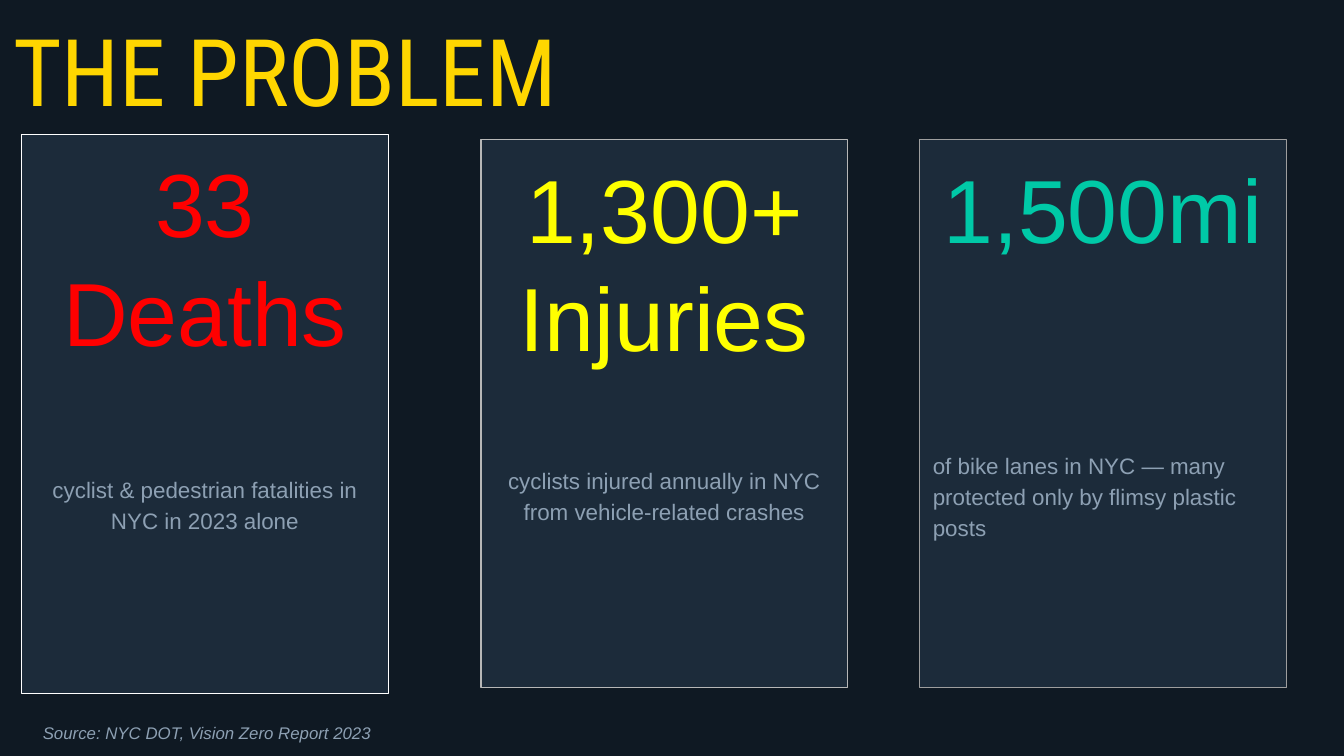
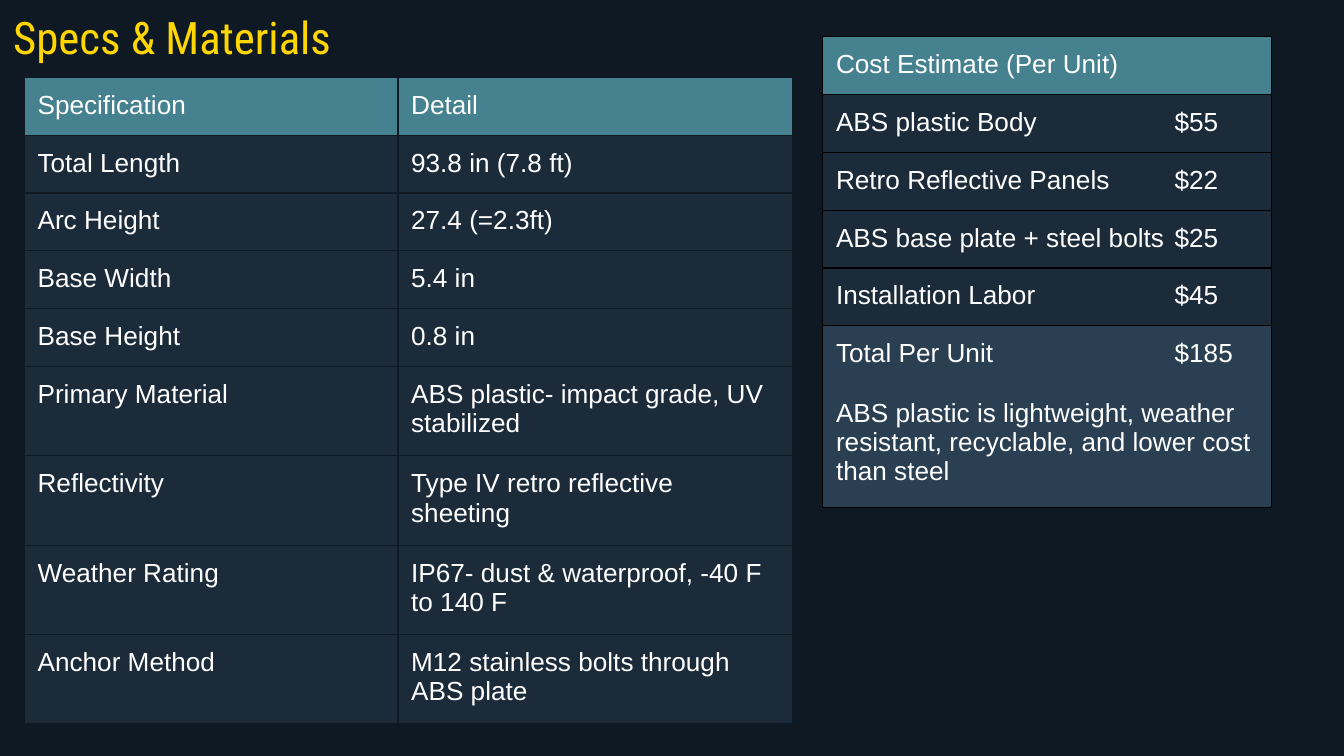
from lxml.etree import SubElement
from pptx import Presentation
from pptx.dml.color import RGBColor
from pptx.enum.shapes import MSO_SHAPE
from pptx.enum.text import MSO_ANCHOR, PP_ALIGN
from pptx.oxml.ns import qn
from pptx.util import Cm, Pt

BACKGROUND = "0F1923"
PANEL = "1C2B3A"
TOTAL_PANEL = "2A3F52"
HEADER = "45818E"
YELLOW = "FFD600"
MUTED = "8DA0B3"
WHITE = "FFFFFF"
BODY_FONT = "Arial"
TITLE_FONT = "Roboto Condensed"
INSET = Cm(0.25)
ROW_HEIGHT = Cm(1.06)
PRICE_STOP = Cm(6.4)

CARDS = [
    ((0.41, 2.54, 6.93, 10.57), WHITE, ["33", "Deaths"], "FF0000",
     "cyclist & pedestrian fatalities in NYC in 2023 alone", 58, PP_ALIGN.CENTER),
    ((9.09, 2.64, 6.93, 10.36), "B7B7B7", ["1,300+", "Injuries"], "FFFF00",
     "cyclists injured annually in NYC from vehicle-related crashes", 50, PP_ALIGN.CENTER),
    ((17.38, 2.64, 6.93, 10.36), "9E9E9E", ["1,500mi"], "00C9A7",
     "of bike lanes in NYC — many protected only by flimsy plastic posts", 100, PP_ALIGN.LEFT),
]

SPECIFICATIONS = [
    ("Specification", "Detail"),
    ("Total Length", "93.8 in (7.8 ft)"),
    ("Arc Height", "27.4 (=2.3ft)"),
    ("Base Width", "5.4 in"),
    ("Base Height", "0.8 in"),
    ("Primary Material", "ABS plastic- impact grade, UV stabilized"),
    ("Reflectivity", "Type IV retro reflective sheeting"),
    ("Weather Rating", "IP67- dust & waterproof, -40 F to 140 F"),
    ("Anchor Method", "M12 stainless bolts through ABS plate"),
]

COSTS = [
    ("Cost Estimate (Per Unit)",),
    ("ABS plastic Body\t$55",),
    ("Retro Reflective Panels\t$22",),
    ("ABS base plate + steel bolts\t$25",),
    ("Installation Labor\t$45",),
    ("Total Per Unit\t$185\nABS plastic is lightweight, weather resistant, "
     "recyclable, and lower cost than steel",),
]


def color(value):
    return RGBColor.from_string(value)


def style(paragraph, size, value, font=BODY_FONT, italic=None):
    for run in paragraph.runs:
        run.font.size = Pt(size)
        run.font.name = font
        run.font.italic = italic
        run.font.color.rgb = color(value)


def prepare(frame, anchor=MSO_ANCHOR.TOP):
    frame.word_wrap = True
    frame.vertical_anchor = anchor
    frame.margin_left = frame.margin_right = INSET
    frame.margin_top = frame.margin_bottom = INSET


def add_label(slide, box, text, size, value, font=BODY_FONT,
              anchor=MSO_ANCHOR.TOP, italic=None, spacing=None):
    frame = slide.shapes.add_textbox(*map(Cm, box)).text_frame
    prepare(frame, anchor)
    frame.text = text
    frame.paragraphs[0].line_spacing = spacing
    style(frame.paragraphs[0], size, value, font, italic)


def add_title(slide, box, text, size, anchor=MSO_ANCHOR.TOP):
    add_label(slide, box, text, size, YELLOW, TITLE_FONT, anchor)


def add_card(slide, box, outline, figures, accent, caption, gap, alignment):
    card = slide.shapes.add_shape(MSO_SHAPE.RECTANGLE, *map(Cm, box))
    card.shadow.inherit = False
    card.fill.solid()
    card.fill.fore_color.rgb = color(PANEL)
    card.line.color.rgb = color(outline)
    card.line.width = Pt(0.75)
    frame = card.text_frame
    prepare(frame)
    frame.text = "\n".join([*figures, caption])
    *headlines, description = frame.paragraphs
    for headline in headlines:
        headline.alignment = PP_ALIGN.CENTER
        headline.line_spacing = Pt(58)
        style(headline, 48, accent)
    description.alignment = alignment
    description.line_spacing = Pt(16.6)
    description.space_before = Pt(gap)
    style(description, 12, MUTED)


def add_borders(cell, value):
    properties = cell._tc.get_or_add_tcPr()
    for side in ("lnL", "lnR", "lnT", "lnB"):
        border = SubElement(properties, qn(f"a:{side}"), w=str(Pt(0.75)))
        fill = SubElement(border, qn("a:solidFill"))
        SubElement(fill, qn("a:srgbClr"), val=value)


def add_price_stop(paragraph):
    stops = SubElement(paragraph._p.get_or_add_pPr(), qn("a:tabLst"))
    SubElement(stops, qn("a:tab"), pos=str(PRICE_STOP), algn="l")


def fill_cell(cell, text, background, border):
    add_borders(cell, border)
    cell.fill.solid()
    cell.fill.fore_color.rgb = color(background)
    cell.margin_left = cell.margin_right = INSET
    cell.margin_top = cell.margin_bottom = INSET
    cell.text_frame.text = text
    for position, paragraph in enumerate(cell.text_frame.paragraphs):
        if position:
            paragraph.space_before = Pt(16)
        if "\t" in paragraph.text:
            add_price_stop(paragraph)
        style(paragraph, 14, WHITE)


def add_grid(slide, left, top, widths, rows, border, last_fill=PANEL):
    table = slide.shapes.add_table(len(rows), len(widths), Cm(left), Cm(top),
                                   Cm(sum(widths)), ROW_HEIGHT * len(rows)).table
    table.first_row = table.horz_banding = False
    for column, width in zip(table.columns, widths):
        column.width = Cm(width)
    fills = [HEADER] + [PANEL] * (len(rows) - 2) + [last_fill]
    for row, texts, background in zip(table.rows, rows, fills):
        row.height = ROW_HEIGHT
        for cell, text in zip(row.cells, texts):
            fill_cell(cell, text, background, border)


def new_slide(deck):
    slide = deck.slides.add_slide(deck.slide_layouts[6])
    slide.background.fill.solid()
    slide.background.fill.fore_color.rgb = color(BACKGROUND)
    return slide


def build_problem(deck):
    slide = new_slide(deck)
    add_title(slide, (0, 0, 13.54, 3.33), "THE PROBLEM", 50)
    for card in CARDS:
        add_card(slide, *card)
    add_label(slide, (0.56, 13.39, 12.98, 0.9), "Source: NYC DOT, Vision Zero Report 2023",
              9, MUTED, italic=True, spacing=1.15)


def build_specs(deck):
    slide = new_slide(deck)
    add_title(slide, (0, 0, 23.67, 1.45), "Specs & Materials", 24, MSO_ANCHOR.BOTTOM)
    add_grid(slide, 0.46, 1.46, (7.06, 7.46), SPECIFICATIONS, BACKGROUND)
    add_grid(slide, 15.55, 0.69, (8.48,), COSTS, "000000", TOTAL_PANEL)


def main():
    deck = Presentation()
    deck.slide_width = Cm(25.4)
    deck.slide_height = Cm(14.29)
    build_problem(deck)
    build_specs(deck)
    deck.save("out.pptx")


if __name__ == "__main__":
    main()
